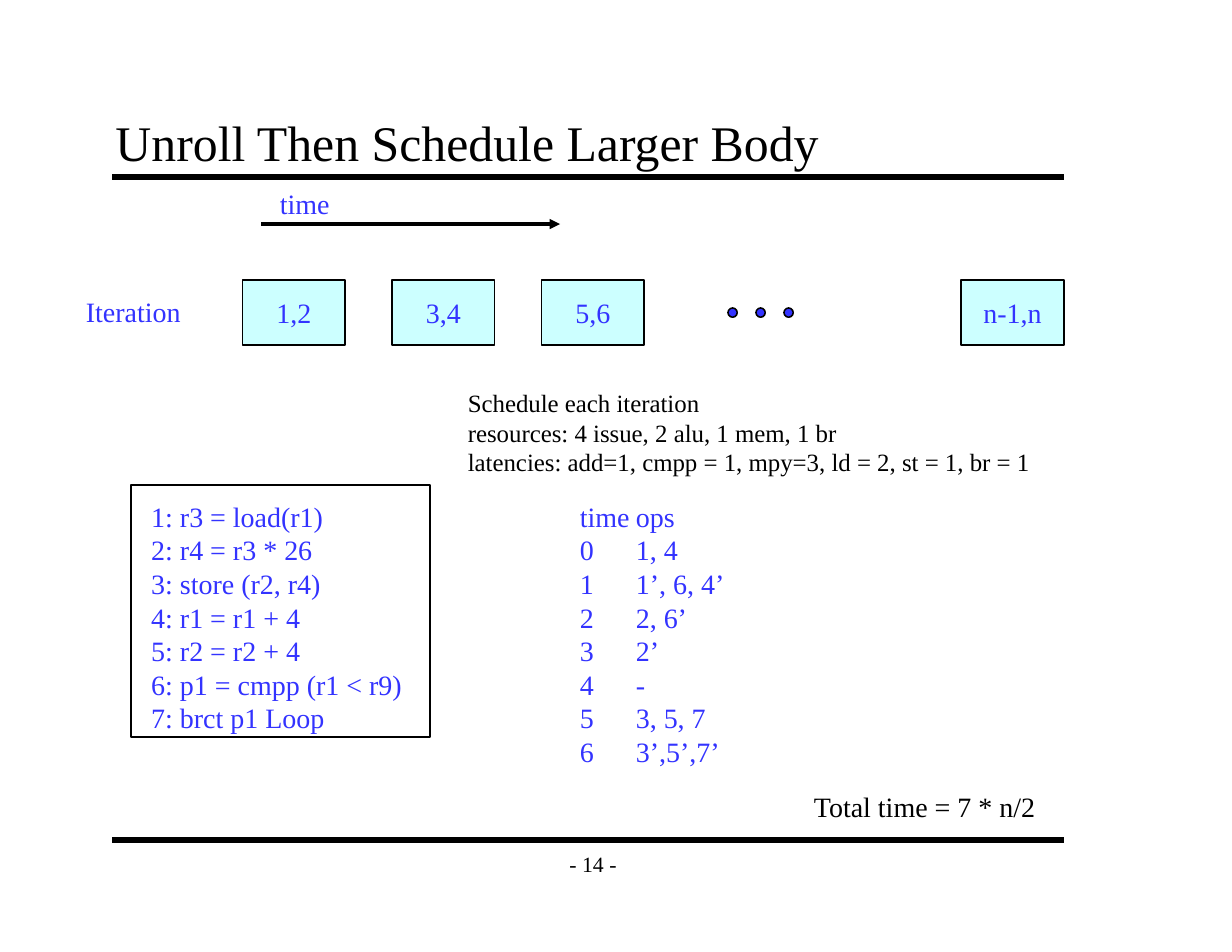
from dataclasses import dataclass

from lxml.etree import SubElement
from pptx import Presentation
from pptx.dml.color import RGBColor
from pptx.enum.shapes import MSO_CONNECTOR, MSO_SHAPE
from pptx.enum.text import MSO_ANCHOR as Anchor, PP_ALIGN as Align
from pptx.oxml.ns import qn
from pptx.util import Cm, Pt


@dataclass(frozen=True)
class Theme:
    """Colours, font and type sizes of the slide."""
    font: str = "Times New Roman"
    ink: RGBColor = RGBColor(0x00, 0x00, 0x00)
    accent: RGBColor = RGBColor(0x33, 0x33, 0xFF)
    tile: RGBColor = RGBColor(0xCC, 0xFF, 0xFF)
    title: int = 32
    body: int = 18
    note: int = 16
    footer: int = 14


THEME = Theme()


def write(frame, lines, size, color, align=Align.LEFT, anchor=Anchor.TOP):
    """Fill a text frame with one paragraph per line."""
    frame.word_wrap = False
    frame.vertical_anchor = anchor
    frame.text = "\n".join(lines)
    for paragraph in frame.paragraphs:
        paragraph.alignment = align
        paragraph.font.name = THEME.font
        paragraph.font.size = Pt(size)
        paragraph.font.color.rgb = color


def add_text(slide, box, lines, size=THEME.body, color=THEME.accent, **placing):
    """Add a text box in the given box."""
    frame = slide.shapes.add_textbox(*map(Cm, box)).text_frame
    write(frame, lines, size, color, **placing)
    return frame


def add_outlined(slide, kind, box, fill=None):
    """Add a thinly outlined shape, hollow unless a fill is given."""
    shape = slide.shapes.add_shape(kind, *map(Cm, box))
    shape.shadow.inherit = False
    if fill is None:
        shape.fill.background()
    else:
        shape.fill.solid()
        shape.fill.fore_color.rgb = fill
    shape.line.color.rgb = THEME.ink
    shape.line.width = Pt(1)
    return shape


def add_rule(slide, left, right, y, weight, arrow=False):
    """Draw a horizontal line, optionally with an arrowhead on the right."""
    rule = slide.shapes.add_connector(
        MSO_CONNECTOR.STRAIGHT, Cm(left), Cm(y), Cm(right), Cm(y))
    rule.line.color.rgb = THEME.ink
    rule.line.width = Pt(weight)
    if arrow:
        SubElement(rule.line._get_or_add_ln(), qn("a:tailEnd"), type="triangle")
    SubElement(rule._element.spPr, qn("a:effectLst"))


def add_page_frame(slide, box, title, page):
    """Place the title, both heavy rules and the page number."""
    left, top, width, height = box
    bottom = top + height
    for y in (top, bottom):
        add_rule(slide, left, left + width, y, 4)
    footer = add_text(slide, (left + 9.96, bottom, 1.9, 1.07), [page], THEME.footer,
                      THEME.ink, align=Align.CENTER, anchor=Anchor.MIDDLE)
    heading = add_text(slide, (left - 0.2, top - 1.67, width, 1.7), [title],
                       THEME.title, THEME.ink, anchor=Anchor.BOTTOM)
    for frame in (footer, heading):
        frame.margin_left = frame.margin_right = Cm(0.28)
        frame.margin_top = frame.margin_bottom = Cm(0.15)


def add_timeline(slide, box, first_iterations, last_iteration):
    """Place the time arrow above a row of iteration tiles with an ellipsis."""
    left, top, width, height = box
    tile_width, tile_height, pitch = 2.33, 1.48, 3.39
    row = top + height - tile_height
    places = [left + i * pitch for i in range(len(first_iterations))]
    places.append(left + width - tile_width)
    for x, label in zip(places, [*first_iterations, last_iteration]):
        tile = add_outlined(slide, MSO_SHAPE.RECTANGLE,
                            (x, row, tile_width, tile_height), THEME.tile)
        write(tile.text_frame, [label], THEME.body, THEME.accent,
              Align.CENTER, Anchor.MIDDLE)
    dot = 0.21
    for i in range(3):
        add_outlined(slide, MSO_SHAPE.OVAL,
                     (left + 11.01 + i * 0.635, row + (tile_height - dot) / 2, dot, dot),
                     THEME.accent)
    add_text(slide, (left - 3.8, row + 0.21, 2.67, 1.02), ["Iteration"])
    add_rule(slide, left + 0.42, left + 7.2, top + 0.97, 2.25, arrow=True)
    add_text(slide, (left + 0.6, top, 1.65, 1.02), ["time"])


def add_code(slide, box, operations):
    """Place the numbered loop body in its frame."""
    left, top, width, height = box
    numbered = [f"{n}: {operation}" for n, operation in enumerate(operations, 1)]
    add_text(slide, (left + 0.21, top + 0.2, width - 0.58, height - 0.13), numbered)
    add_outlined(slide, MSO_SHAPE.RECTANGLE, box)


def add_schedule(slide, box, ops_by_cycle):
    """Place the tabbed list of operations issued in each cycle."""
    cycles = [f"{cycle}\t{ops}" for cycle, ops in enumerate(ops_by_cycle)]
    add_text(slide, box, ["time\tops", *cycles])


def main():
    """Build and save the slide."""
    deck = Presentation()
    deck.slide_width, deck.slide_height = Cm(27.94), Cm(21.59)
    slide = deck.slides.add_slide(deck.slide_layouts[6])
    add_page_frame(slide, (2.54, 4.01, 21.59, 15.04),
                   "Unroll Then Schedule Larger Body", "- 14 -")
    add_timeline(slide, (5.5, 4.11, 18.63, 3.72), ["1,2", "3,4", "5,6"], "n-1,n")
    add_text(slide, (10.36, 8.66, 13.31, 2.29), [
        "Schedule each iteration",
        "resources: 4 issue, 2 alu, 1 mem, 1 br",
        "latencies: add=1, cmpp = 1, mpy=3, ld = 2, st = 1, br = 1",
    ], THEME.note, THEME.ink)
    add_schedule(slide, (12.9, 11.2, 5.05, 6.35),
                 ["1, 4", "1’, 6, 4’", "2, 6’", "2’", "-", "3, 5, 7", "3’,5’,7’"])
    add_code(slide, (2.97, 11, 6.78, 5.72), [
        "r3 = load(r1)", "r4 = r3 * 26", "store (r2, r4)", "r1 = r1 + 4",
        "r2 = r2 + 4", "p1 = cmpp (r1 < r9)", "brct p1 Loop",
    ])
    add_text(slide, (18.21, 17.78, 5.59, 1.02), ["Total time = 7 * n/2"],
             color=THEME.ink)
    deck.save("out.pptx")


if __name__ == "__main__":
    main()
